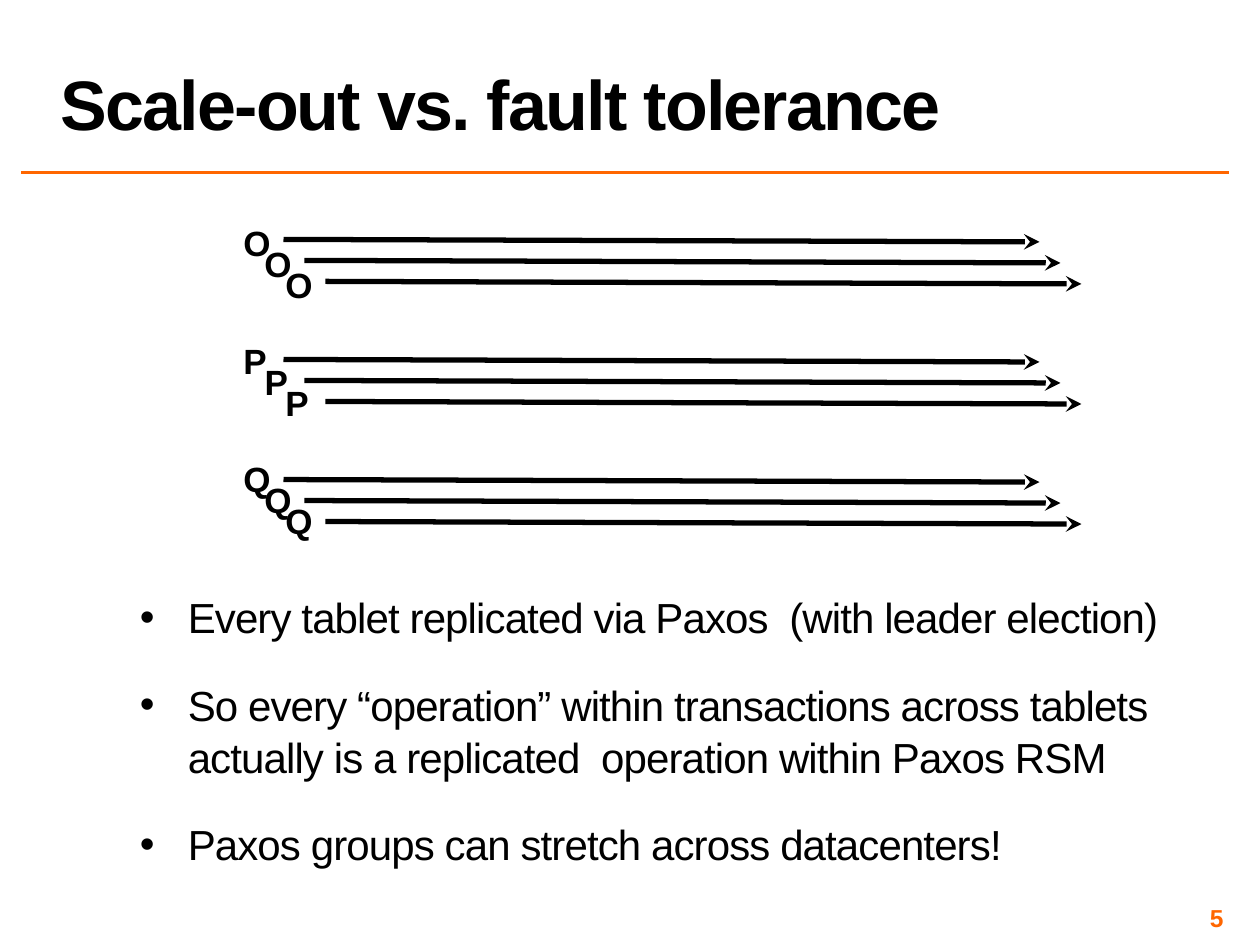
from lxml.etree import SubElement
from pptx import Presentation
from pptx.dml.color import RGBColor
from pptx.enum.shapes import MSO_CONNECTOR
from pptx.enum.text import MSO_ANCHOR, MSO_AUTO_SIZE, PP_ALIGN
from pptx.oxml.ns import qn
from pptx.util import Inches, Pt

BLACK = RGBColor(0x00, 0x00, 0x00)
ORANGE = RGBColor(0xFF, 0x66, 0x00)
FONT = "Arial"

TITLE = "Scale-out vs. fault tolerance"
PAGE_NUMBER = "5"
TABLETS = [("O", 0.42), ("P", 0.39), ("Q", 0.42)]
REPLICAS = 3
POINTS = [
    "Every tablet replicated via Paxos  (with leader election)",
    "So every “operation” within transactions across tablets "
    "actually is a replicated  operation within Paxos RSM",
    "Paxos groups can stretch across datacenters!",
]

REPLICA_STEP = 1 / 6
LABEL_LEFT, LABEL_TOP, LABEL_PITCH = 1.83, 1.71, 0.935
ARROW_LEFT, ARROW_TOP, ARROW_PITCH = 2.25, 1.9, 0.953
ARROW_LENGTH, ARROW_DROP = 6, 0.02


def place(shape, left, top, width, height):
    shape.left, shape.top = Inches(left), Inches(top)
    shape.width, shape.height = Inches(width), Inches(height)


def set_insets(frame, inset):
    frame.margin_left = frame.margin_right = Inches(inset)
    frame.margin_top = frame.margin_bottom = Inches(inset)


def add_run(paragraph, text, size, color=BLACK, bold=False, spacing=0):
    run = paragraph.add_run()
    run.text = text
    run.font.name = FONT
    run.font.size = Pt(size)
    run.font.bold = bold
    run.font.color.rgb = color
    if spacing:
        run._r.get_or_add_rPr().set("spc", str(int(spacing * 100)))


def add_line(shapes, start, end, color, width, arrow=False):
    line = shapes.add_connector(
        MSO_CONNECTOR.STRAIGHT, *(Inches(value) for value in start + end))
    line.line.color.rgb = color
    line.line.width = Pt(width)
    if arrow:
        SubElement(line.line._get_or_add_ln(), qn("a:tailEnd"), type="stealth")
    SubElement(line._element.spPr, qn("a:effectLst"))


def add_replica(shapes, name, label_width, row, replica):
    shift = replica * REPLICA_STEP
    x = ARROW_LEFT + shift
    y = ARROW_TOP + row * ARROW_PITCH + shift
    group = shapes.add_group_shape().shapes
    add_line(group, (x, y), (x + ARROW_LENGTH, y + ARROW_DROP), BLACK, 3, arrow=True)
    label = group.add_textbox(
        Inches(LABEL_LEFT + shift),
        Inches(LABEL_TOP + row * LABEL_PITCH + shift),
        Inches(label_width), Inches(0.44))
    frame = label.text_frame
    frame.word_wrap = False
    frame.auto_size = MSO_AUTO_SIZE.SHAPE_TO_FIT_TEXT
    frame.paragraphs[0].alignment = PP_ALIGN.CENTER
    add_run(frame.paragraphs[0], name, 20, bold=True)


def fill_title(title):
    place(title, 0.38, 0.02, 9.37, 1.17)
    frame = title.text_frame
    frame.auto_size = MSO_AUTO_SIZE.NONE
    frame.vertical_anchor = MSO_ANCHOR.BOTTOM
    heading = frame.paragraphs[0]
    heading.alignment = PP_ALIGN.LEFT
    heading.line_spacing = 0.8
    add_run(heading, TITLE, 40, bold=True, spacing=-1)


def fill_body(body):
    place(body, 1.07, 4.64, 8.49, 2.93)
    frame = body.text_frame
    frame.auto_size = MSO_AUTO_SIZE.NONE
    frame.vertical_anchor = MSO_ANCHOR.TOP
    set_insets(frame, 0.04)
    for index, point in enumerate(POINTS):
        paragraph = frame.add_paragraph() if index else frame.paragraphs[0]
        paragraph.space_before, paragraph.space_after = Pt(12), Pt(8)
        paragraph.line_spacing = 1.04
        properties = paragraph._p.get_or_add_pPr()
        properties.set("marL", str(Inches(0.38)))
        properties.set("indent", str(Inches(-0.38)))
        SubElement(properties, qn("a:buFont"), typeface=FONT)
        SubElement(properties, qn("a:buChar"), char="•")
        add_run(paragraph, point, 24, spacing=-0.5)


def add_page_number(shapes):
    number = shapes.add_textbox(Inches(7.42), Inches(7.17), Inches(2.33), Inches(0.23))
    frame = number.text_frame
    frame.word_wrap = True
    frame.vertical_anchor = MSO_ANCHOR.MIDDLE
    set_insets(frame, 0.04)
    frame.paragraphs[0].alignment = PP_ALIGN.RIGHT
    add_run(frame.paragraphs[0], PAGE_NUMBER, 14, ORANGE, bold=True)


def main():
    deck = Presentation()
    deck.slide_width, deck.slide_height = Inches(10), Inches(7.5)
    slide = deck.slides.add_slide(deck.slide_layouts[1])
    fill_title(slide.shapes.title)
    fill_body(slide.placeholders[1])
    add_line(slide.shapes, (0.17, 1.37), (9.75, 1.37), ORANGE, 2)
    add_page_number(slide.shapes)
    for row, (name, label_width) in enumerate(TABLETS):
        for replica in range(REPLICAS):
            add_replica(slide.shapes, name, label_width, row, replica)
    deck.save("out.pptx")


if __name__ == "__main__":
    main()
